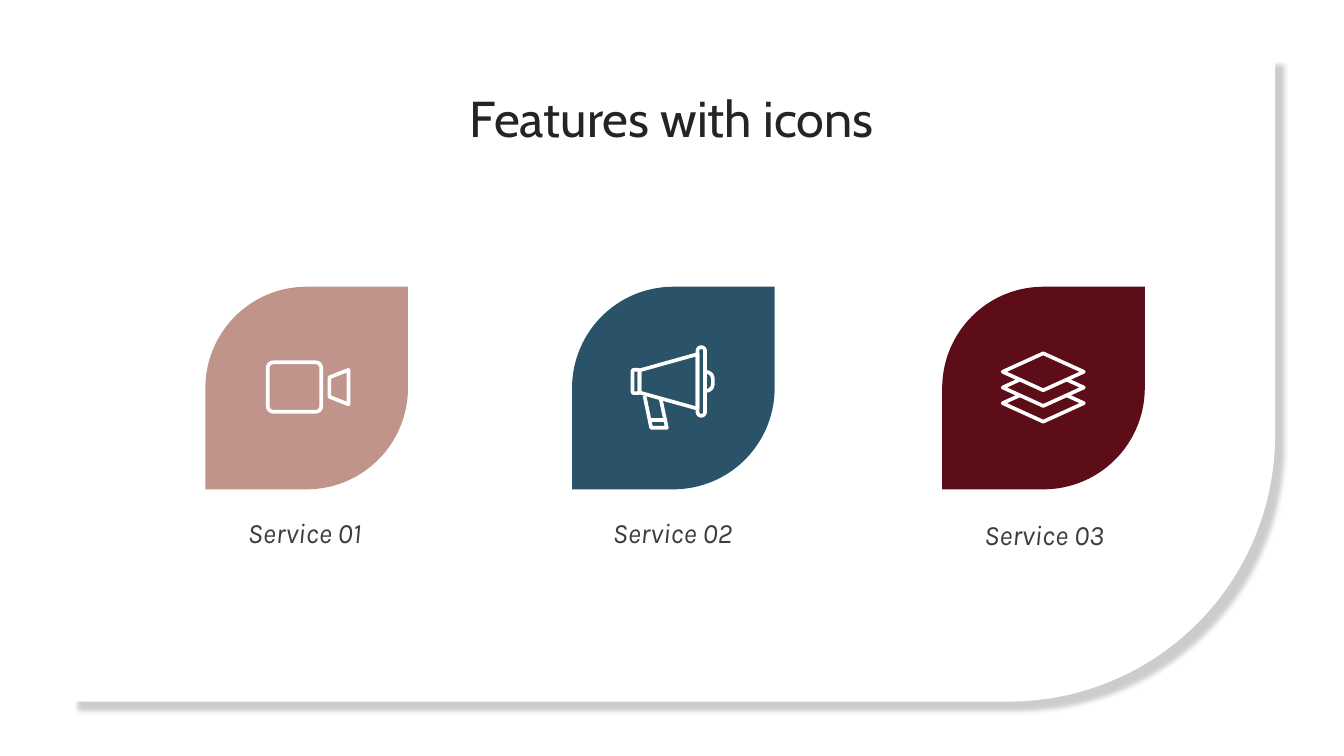
from math import cos, radians, sin
from lxml.etree import SubElement
from pptx import Presentation
from pptx.dml.color import RGBColor
from pptx.enum.shapes import MSO_SHAPE
from pptx.enum.text import PP_ALIGN
from pptx.oxml.ns import qn
from pptx.util import Pt

WHITE = "FFFFFF"
STROKE = 2.6
LEAF = 144.72


def color(text):
    """Turn a hex string into a colour."""
    return RGBColor.from_string(text)


def paint(shape, fill=None, line=None):
    """Set fill and line, and remove the shadow."""
    shape.shadow.inherit = False
    if fill:
        shape.fill.solid()
        shape.fill.fore_color.rgb = color(fill)
    else:
        shape.fill.background()
    if line:
        shape.line.color.rgb = color(line)
        shape.line.width = Pt(STROKE)
        SubElement(shape.line._get_or_add_ln(), qn("a:round"))
    else:
        shape.line.fill.background()
    return shape


def leaf(slide, box, adjust, fill):
    """Add a shape with two opposite round corners."""
    shape = slide.shapes.add_shape(MSO_SHAPE.ROUND_2_DIAG_RECTANGLE, *map(Pt, box))
    shape.adjustments[0] = adjust
    return paint(shape, fill)


def frame(left, top, width, height, radius):
    """Return the points of a rounded frame."""
    right, low = left + width - radius, top + height - radius
    corners = [(right, low), (left + radius, low),
               (left + radius, top + radius), (right, top + radius)]
    return [(x + radius * cos(radians(90 * turn + part)),
             y + radius * sin(radians(90 * turn + part)))
            for turn, (x, y) in enumerate(corners) for part in range(0, 91, 15)]


def draw(slide, left, top, closed, opened=()):
    """Draw one icon of white strokes placed from left and top."""
    builder = None
    for points in [*closed, *opened]:
        spots = [(Pt(left + x), Pt(top + y)) for x, y in points]
        if builder is None:
            builder = slide.shapes.build_freeform(*spots[0])
        else:
            builder.move_to(*spots[0])
        builder.add_line_segments(spots[1:], close=points in closed)
    paint(builder.convert_to_shape(), line=WHITE)


def write(slide, text, box, font, size, ink, italic=False):
    """Add one centred line of text."""
    body = slide.shapes.add_textbox(*map(Pt, box)).text_frame
    body.word_wrap = True
    line = body.paragraphs[0]
    line.alignment = PP_ALIGN.CENTER
    run = line.add_run()
    run.text = text
    run.font.name = font
    run.font.size = Pt(size)
    run.font.italic = italic
    run.font.color.rgb = color(ink)


def panel(slide, box):
    """Draw the white panel with its offset shadow."""
    card = leaf(slide, box, 0.412, WHITE)
    effects = card._element.spPr.find(qn("a:effectLst"))
    shadow = SubElement(effects, qn("a:outerShdw"), blurRad=str(Pt(2)),
                        dist=str(Pt(10)), dir="2700000", algn="tl", rotWithShape="0")
    black = SubElement(shadow, qn("a:srgbClr"), val="000000")
    SubElement(black, qn("a:alpha"), val="20000")


def video(slide, left, top):
    """Draw a video camera."""
    lens = [(88.6, 64.8), (102.2, 59.4), (102.2, 84), (88.6, 78.6)]
    draw(slide, left, top, [frame(44.6, 54, 38.2, 35.3, 4), lens])


def horn(slide, left, top):
    """Draw a megaphone."""
    cone = [(48.2, 59.8), (89.6, 48.2), (89.6, 87.1), (48.2, 75.6)]
    grip = [(51.8, 78.1), (56.5, 100.8), (67.7, 100.8), (63.4, 80.6)]
    bar = [(55.4, 95.4), (66.5, 95.4)]
    knob = [(95, 60.8), (97.6, 61.2), (99.7, 62.8), (100.6, 65.5),
            (100.6, 69.8), (99.7, 72.5), (97.6, 74.1), (95, 74.5)]
    draw(slide, left, top,
         [cone, frame(43.2, 59.4, 5, 16.6, 1), frame(89.6, 43.2, 5.4, 49, 2.7)],
         [grip, bar, knob])


def layers(slide, left, top):
    """Draw three stacked sheets, the lower two partly hidden."""
    sheet = [(72.2, 47.6), (101.2, 60.8), (72.2, 74), (43.2, 60.8)]
    edges = [[(55.5, y - 5.6), (43.2, y), (72.2, y + 13.2), (101.2, y), (88.9, y - 5.6)]
             for y in (72, 83.2)]
    draw(slide, left, top, [sheet], edges)


def service(slide, left, top, fill, icon, text, label):
    """Draw a leaf with its icon and the label below."""
    leaf(slide, (left, top, LEAF, LEAF), 0.5, fill)
    icon(slide, left, top)
    shift, drop, width = label
    write(slide, text, (left + shift, top + drop, width, 31.68), "Karla", 20, "3C3D3E", True)


def main():
    """Build and save the slide."""
    deck = Presentation()
    deck.slide_width, deck.slide_height = Pt(960), Pt(540)
    slide = deck.slides.add_slide(deck.slide_layouts[6])
    panel(slide, (48.96, 39.6, 861.84, 461.52))
    write(slide, "Features with icons", (170.9, 58.4, 617.76, 51.12), "Cabin", 36, "242425")
    items = [
        (146.7, "C1948B", video, "Service 01", (-12, 159.6, 165.6)),
        (408.6, "2A536A", horn, "Service 02", (-14, 159.6, 171.36)),
        (673, "5D0D17", layers, "Service 03", (-11.8, 161, 169.2)),
    ]
    for left, fill, icon, text, label in items:
        service(slide, left, 204.8, fill, icon, text, label)
    deck.save("out.pptx")


if __name__ == "__main__":
    main()
